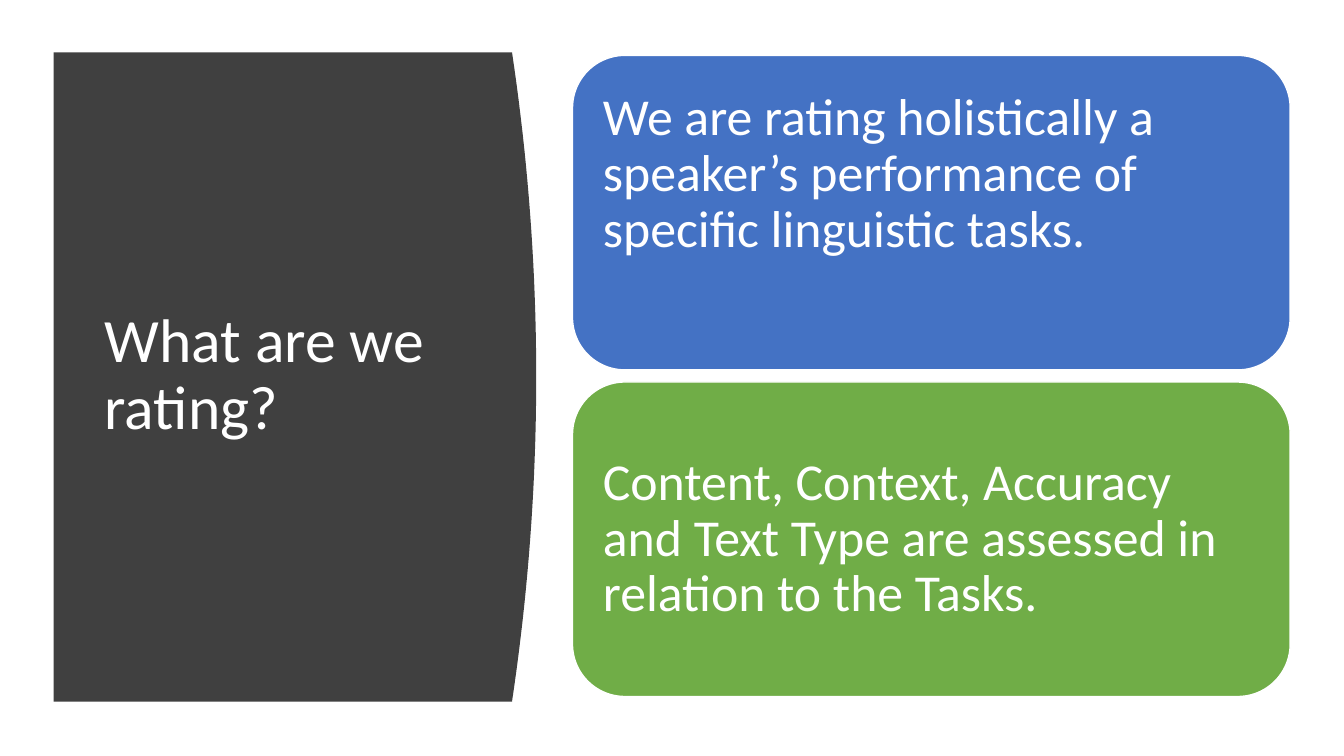
import dataclasses

import pptx
import pptx.dml.color
import pptx.enum.shapes
import pptx.enum.text
import pptx.util

COLOURS: dict[str, str] = {
    "panel": "404040",
    "blue": "4472C4",
    "green": "70AD47",
    "white": "FFFFFF",
}
FONT = "Calibri"
SLIDE_WIDTH = pptx.util.Inches(13.333)
SLIDE_HEIGHT = pptx.util.Inches(7.5)
GRID = 100

PANEL_LEFT, PANEL_EDGE, PANEL_APEX = 4, 38.1, 39.9
PANEL_TOP, PANEL_BOTTOM = 6.93, 92.8
CURVE_STEPS = 40

CARD_LEFT, CARD_TOP = 42.6, 7.33
CARD_WIDTH, CARD_HEIGHT, CARD_GAP = 53.4, 41.6, 1.6
CARD_INSET = 0.15


@dataclasses.dataclass(frozen=True)
class Card:
    text: str
    colour: str
    bottom_inset: float


CARDS = [
    Card(
        "We are rating holistically a speaker’s performance of specific linguistic tasks.",
        "blue",
        0.9,
    ),
    Card(
        "Content, Context, Accuracy and Text Type are assessed in relation to the Tasks.",
        "green",
        CARD_INSET,
    ),
]


def column(share: float) -> int:
    return round(SLIDE_WIDTH * share / GRID)


def row(share: float) -> int:
    return round(SLIDE_HEIGHT * share / GRID)


def colour(name: str) -> pptx.dml.color.RGBColor:
    return pptx.dml.color.RGBColor.from_string(COLOURS[name])


def fill_shape(shape, name: str) -> None:
    shape.shadow.inherit = False
    shape.fill.solid()
    shape.fill.fore_color.rgb = colour(name)


def write_text(box, text: str, size: float) -> None:
    frame = box.text_frame
    frame.word_wrap = True
    frame.vertical_anchor = pptx.enum.text.MSO_ANCHOR.MIDDLE
    para = frame.paragraphs[0]
    para.text = text
    para.alignment = pptx.enum.text.PP_ALIGN.LEFT
    para.line_spacing = 0.9
    para.font.name = FONT
    para.font.size = pptx.util.Pt(size)
    para.font.color.rgb = colour("white")


def draw_panel(page) -> None:
    middle = (PANEL_TOP + PANEL_BOTTOM) / 2
    half = (PANEL_BOTTOM - PANEL_TOP) / 2
    curve = []
    for step in range(CURVE_STEPS + 1):
        offset = 2 * step / CURVE_STEPS - 1
        bulge = (PANEL_APEX - PANEL_EDGE) * (1 - offset**2)
        curve.append((column(PANEL_EDGE + bulge), row(middle + half * offset)))
    builder = page.shapes.build_freeform(column(PANEL_LEFT), row(PANEL_TOP))
    builder.add_line_segments(curve + [(column(PANEL_LEFT), row(PANEL_BOTTOM))], close=True)
    panel = builder.convert_to_shape()
    fill_shape(panel, "panel")
    panel.line.fill.background()


def draw_title(page) -> None:
    box = page.shapes.add_textbox(column(7.05), row(14.8), column(28.05), row(69.87))
    write_text(box, "What are we rating?", 44)


def draw_card(page, card: Card, index: int) -> None:
    top = CARD_TOP + index * (CARD_HEIGHT + CARD_GAP)
    box = page.shapes.add_shape(
        pptx.enum.shapes.MSO_SHAPE.ROUNDED_RECTANGLE,
        column(CARD_LEFT),
        row(top),
        column(CARD_WIDTH),
        row(CARD_HEIGHT),
    )
    fill_shape(box, card.colour)
    box.line.color.rgb = colour("white")
    box.line.width = pptx.util.Pt(1)
    frame = box.text_frame
    frame.margin_left = frame.margin_right = frame.margin_top = pptx.util.Inches(CARD_INSET)
    frame.margin_bottom = pptx.util.Inches(card.bottom_inset)
    write_text(box, card.text, 37)


def main() -> None:
    deck = pptx.Presentation()
    deck.slide_width = SLIDE_WIDTH
    deck.slide_height = SLIDE_HEIGHT
    page = deck.slides.add_slide(deck.slide_layouts[6])
    draw_panel(page)
    draw_title(page)
    for index, card in enumerate(CARDS):
        draw_card(page, card, index)
    deck.save("out.pptx")


if __name__ == "__main__":
    main()
